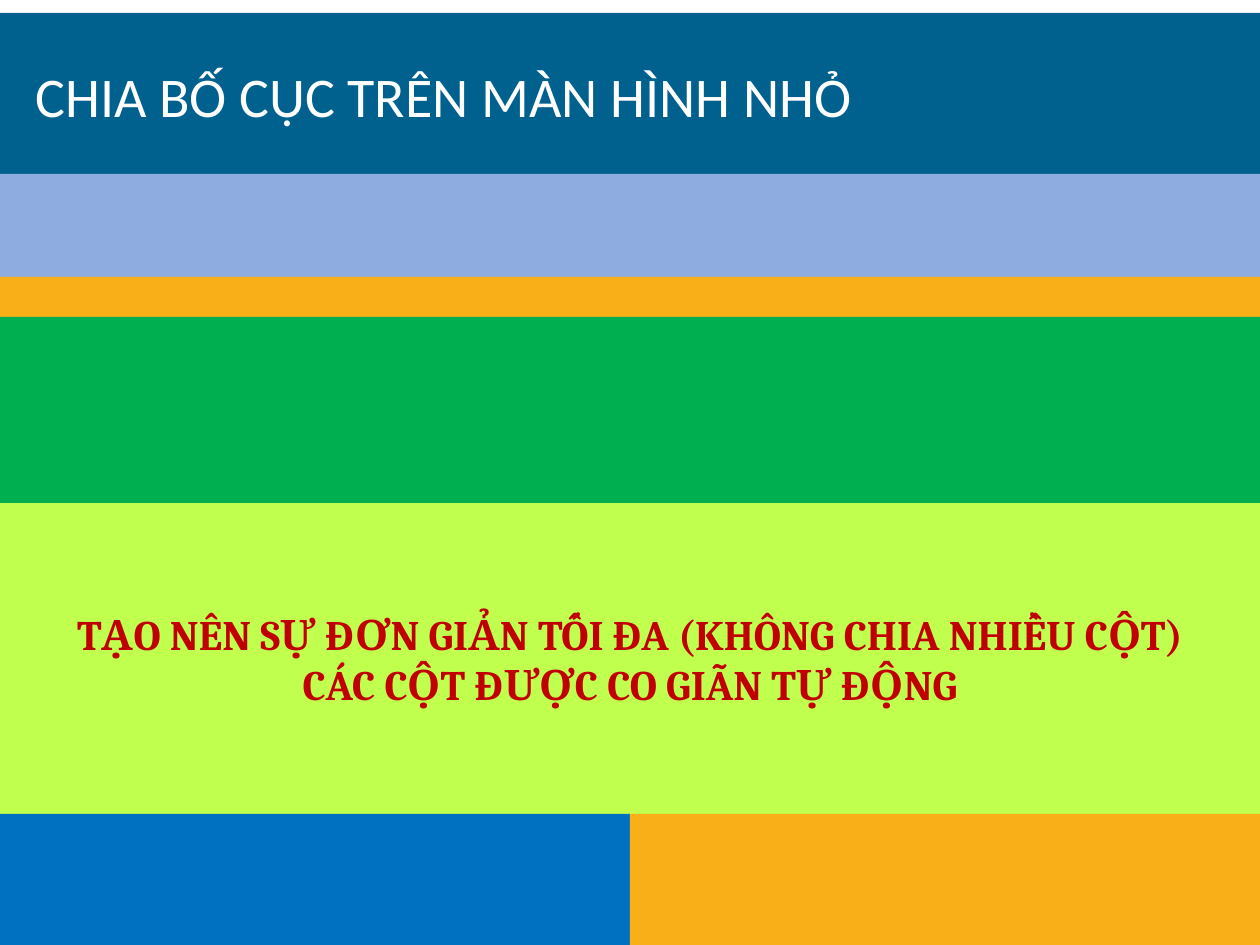
import pptx
import pptx.util
import pptx.dml.color
import pptx.enum.shapes
import pptx.enum.text

PX = 914400 // 126
WIDE, HIGH, TOP = 1260, 945, 13

TITLE = ["CHIA BỐ CỤC TRÊN MÀN HÌNH NHỎ"]
NOTE = ["TẠO NÊN SỰ ĐƠN GIẢN TỐI ĐA (KHÔNG CHIA NHIỀU CỘT)",
        "CÁC CỘT ĐƯỢC CO GIÃN TỰ ĐỘNG"]

# Stacked bands: height, colours of equal columns, text lines
BANDS = [
    (161, ["00618E"], []),
    (103, ["8FACE1"], []),
    (40, ["F9AF18"], []),
    (186, ["00B050"], []),
    (311, ["C0FF4D"], NOTE),
    (131, ["0070C0", "F9AF18"], []),
]
HEAD = {"name": "Calibri", "size": pptx.util.Pt(32), "bold": False}
BODY = {"name": "Cambria", "size": pptx.util.Pt(24), "bold": True}
ALIGN = pptx.enum.text.PP_ALIGN
ANCHOR = pptx.enum.text.MSO_ANCHOR


def tint(code):
    return pptx.dml.color.RGBColor.from_string(code)


def place(*box):
    return [n * PX for n in box]


def write(shape, lines, style, color, align, anchor):
    frame = shape.text_frame
    frame.word_wrap = True
    frame.vertical_anchor = anchor
    for i, line in enumerate(lines):
        para = frame.add_paragraph() if i else frame.paragraphs[0]
        para.alignment = align
        run = para.add_run()
        run.text = line
        for key, value in style.items():
            setattr(run.font, key, value)
        run.font.color.rgb = tint(color)


def block(slide, box, color):
    shape = slide.shapes.add_shape(
        pptx.enum.shapes.MSO_SHAPE.RECTANGLE, *place(*box))
    shape.shadow.inherit = False
    shape.fill.solid()
    shape.fill.fore_color.rgb = tint(color)
    shape.line.fill.background()
    return shape


def main():
    deck = pptx.Presentation()
    deck.slide_width, deck.slide_height = place(WIDE, HIGH)
    slide = deck.slides.add_slide(deck.slide_layouts[6])

    # Colour bands
    y = TOP
    for high, colors, lines in BANDS:
        wide = WIDE // len(colors)
        for col, color in enumerate(colors):
            shape = block(slide, (col * wide, y, wide, high), color)
            if lines:
                write(shape, lines, BODY, "C00000", ALIGN.CENTER, ANCHOR.MIDDLE)
        y += high

    # Title
    title = slide.shapes.add_textbox(*place(23, 55, 1000, 78))
    write(title, TITLE, HEAD, "FFFFFF", ALIGN.LEFT, ANCHOR.TOP)

    deck.save("out.pptx")


if __name__ == "__main__":
    main()
